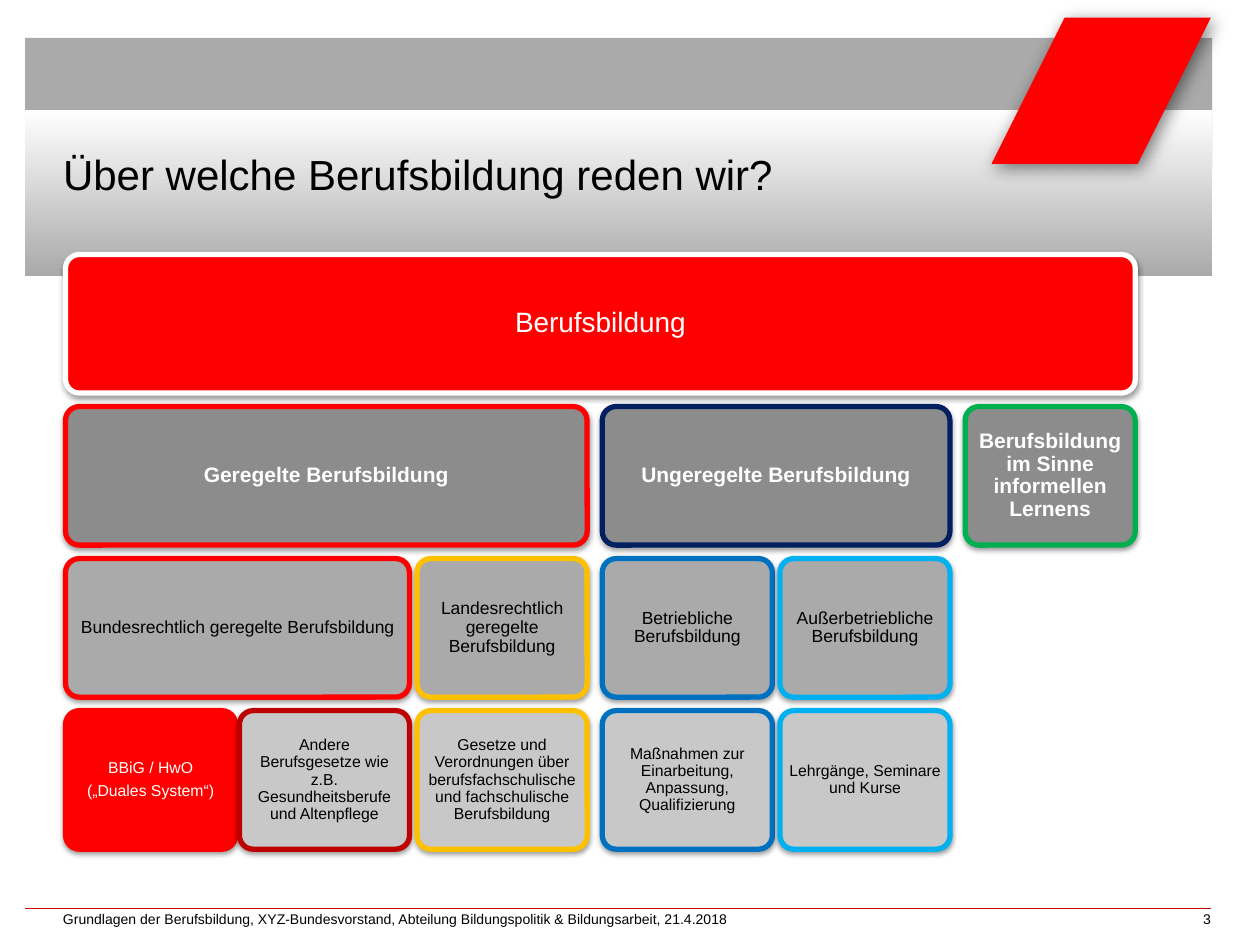
from lxml import etree
from pptx import Presentation
from pptx.dml.color import RGBColor
from pptx.enum.shapes import MSO_CONNECTOR, MSO_SHAPE
from pptx.enum.text import MSO_ANCHOR, MSO_AUTO_SIZE, PP_ALIGN
from pptx.oxml.ns import qn
from pptx.util import Inches, Pt

WHITE = RGBColor(0xFF, 0xFF, 0xFF)
BLACK = RGBColor(0x00, 0x00, 0x00)
RED = RGBColor(0xFF, 0x00, 0x00)
DARK_RED = RGBColor(0xBF, 0x00, 0x00)
RULE_RED = RGBColor(0xCC, 0x00, 0x00)
YELLOW = RGBColor(0xFF, 0xC0, 0x00)
NAVY = RGBColor(0x00, 0x20, 0x60)
BLUE = RGBColor(0x00, 0x70, 0xC0)
SKY = RGBColor(0x00, 0xB0, 0xF0)
GREEN = RGBColor(0x00, 0xB0, 0x50)
DARK_GREY = RGBColor(0x8C, 0x8C, 0x8C)
GREY = RGBColor(0xAA, 0xAA, 0xAA)
LIGHT_GREY = RGBColor(0xC8, 0xC8, 0xC8)
FONT = "Arial"

TITLE = "Über welche Berufsbildung reden wir?"
FOOTER = ("Grundlagen der Berufsbildung, XYZ-Bundesvorstand, "
          "Abteilung Bildungspolitik & Bildungsarbeit, 21.4.2018")
PAGE = "3"

# Each node: (paragraphs, outline colour, children)
TREE = (["Berufsbildung"], WHITE, [
    (["Geregelte Berufsbildung"], RED, [
        (["Bundesrechtlich geregelte Berufsbildung"], RED, [
            (["BBiG / HwO", "(„Duales System“)"], RED, []),
            (["Andere Berufsgesetze wie z.B. Gesundheitsberufe und Altenpflege"],
             DARK_RED, []),
        ]),
        (["Landesrechtlich geregelte Berufsbildung"], YELLOW, [
            (["Gesetze und Verordnungen über berufsfachschulische "
              "und fachschulische Berufsbildung"], YELLOW, []),
        ]),
    ]),
    (["Ungeregelte Berufsbildung"], NAVY, [
        (["Betriebliche Berufsbildung"], BLUE, [
            (["Maßnahmen zur Einarbeitung, Anpassung, Qualifizierung"], BLUE, []),
        ]),
        (["Außerbetriebliche Berufsbildung"], SKY, [
            (["Lehrgänge, Seminare und Kurse"], SKY, []),
        ]),
    ]),
    (["Berufsbildung im Sinne informellen Lernens"], GREEN, []),
])

# Per level: fill, font colour, font size, bold, margin, gap between children
LEVELS = [
    (RED, WHITE, 16, False, 0.07, 0.12),
    (DARK_GREY, WHITE, 12, True, 0.05, 0.06),
    (GREY, BLACK, 10, False, 0.04, 0.03),
    (LIGHT_GREY, BLACK, 9, False, 0.04, 0),
]
HIGHLIGHT = "BBiG / HwO"

TREE_LEFT, TREE_TOP, LAST_ROW_TOP = 0.52, 2.02, 5.64
BOX_W, BOX_H = 1.35, 1.1
ROW_STEP = (LAST_ROW_TOP - TREE_TOP) / (len(LEVELS) - 1)
BAND_LEFT, BAND_W = 0.2, 9.42
TEXT_LEFT, RIGHT_EDGE = 0.5, 9.61
FOOTER_TOP, FOOTER_H = 7.21, 0.16


def add_block(shapes, kind, left, top, width, height, fill=None):
    block = shapes.add_shape(kind, *map(Inches, (left, top, width, height)))
    block.shadow.inherit = False
    block.line.fill.background()
    if fill is not None:
        block.fill.solid()
        block.fill.fore_color.rgb = fill
    return block


def cast_shadow(shape, opacity, blur, distance, angle):
    """Give a shape an outer shadow; blur and distance in points."""
    effects = shape.element.spPr.find(qn("a:effectLst"))
    shadow = etree.SubElement(
        effects, qn("a:outerShdw"), blurRad=str(Pt(blur)), dist=str(Pt(distance)),
        dir=str(angle * 60000), algn="ctr", rotWithShape="0")
    colour = etree.SubElement(shadow, qn("a:srgbClr"), val=str(BLACK))
    etree.SubElement(colour, qn("a:alpha"), val=str(opacity * 1000))


def write(frame, paragraphs, size, colour, align, anchor=MSO_ANCHOR.MIDDLE,
          margins=(0, 0), bold=False):
    """Fill a text frame; margins are (horizontal, vertical) in inches."""
    frame.word_wrap = True
    frame.auto_size = MSO_AUTO_SIZE.NONE
    frame.vertical_anchor = anchor
    frame.margin_left = frame.margin_right = Inches(margins[0])
    frame.margin_top = frame.margin_bottom = Inches(margins[1])
    for index, text in enumerate(paragraphs):
        paragraph = frame.add_paragraph() if index else frame.paragraphs[0]
        paragraph.alignment = align
        run = paragraph.add_run()
        run.text = text
        run.font.name, run.font.size, run.font.bold = FONT, Pt(size), bold
        run.font.color.rgb = colour


def tree_width(node, level=0):
    children = node[2]
    if not children:
        return BOX_W
    gaps = LEVELS[level][-1] * (len(children) - 1)
    return sum(tree_width(child, level + 1) for child in children) + gaps


def draw_tree(shapes, node, left=TREE_LEFT, level=0):
    """Draw a node spanning its children, then the children below it."""
    paragraphs, outline, children = node
    fill, colour, size, bold, margin, gap = LEVELS[level]
    if paragraphs[0] == HIGHLIGHT:
        fill, colour = RED, WHITE
    box = add_block(shapes, MSO_SHAPE.ROUNDED_RECTANGLE, left,
                    TREE_TOP + level * ROW_STEP, tree_width(node, level), BOX_H, fill)
    box.adjustments[0] = 0.1
    box.line.color.rgb = outline
    box.line.width = Pt(3)
    cast_shadow(box, 38, 3.1, 1.6, 90)
    write(box.text_frame, paragraphs, size, colour, PP_ALIGN.CENTER,
          margins=(margin, margin), bold=bold)
    for paragraph in box.text_frame.paragraphs:
        paragraph.line_spacing = 0.9
        paragraph.space_after = Pt(0.35 * size)
    for child in children:
        draw_tree(shapes, child, left, level + 1)
        left += tree_width(child, level + 1) + gap


def draw_header(shapes):
    add_block(shapes, MSO_SHAPE.RECTANGLE, BAND_LEFT, 0.3, BAND_W, 1.05, GREY)
    band = add_block(shapes, MSO_SHAPE.RECTANGLE, BAND_LEFT, 0.87, BAND_W, 1.32)
    band.fill.gradient()
    band.fill.gradient_angle = 270
    for stop, colour in zip(band.fill.gradient_stops, (WHITE, GREY)):
        stop.color.rgb = colour
    emblem = add_block(shapes, MSO_SHAPE.PARALLELOGRAM, 7.87, 0.14, 1.74, 1.16, RED)
    emblem.adjustments[0] = 0.5
    cast_shadow(emblem, 50, 10, 3, 56)


def draw_title(shapes):
    title = shapes.title
    title.left, title.top, title.width, title.height = map(
        Inches, (TEXT_LEFT, 0.52, 6.84, 1.11))
    write(title.text_frame, [TITLE], 24, BLACK, PP_ALIGN.LEFT,
          MSO_ANCHOR.BOTTOM, (0, 0.05))
    title.element.getparent().append(title.element)  # in front of the header bands


def draw_footer(shapes):
    rule = shapes.add_connector(
        MSO_CONNECTOR.STRAIGHT, Inches(BAND_LEFT), Inches(FOOTER_TOP),
        Inches(RIGHT_EDGE), Inches(FOOTER_TOP))
    rule.line.color.rgb = RULE_RED
    rule.line.width = Pt(0.75)
    etree.SubElement(rule.element.spPr, qn("a:effectLst"))
    for text, left, width, align in (
            (FOOTER, TEXT_LEFT, 7.64, PP_ALIGN.LEFT),
            (PAGE, RIGHT_EDGE - 0.39, 0.39, PP_ALIGN.RIGHT)):
        note = shapes.add_textbox(*map(Inches, (left, FOOTER_TOP, width, FOOTER_H)))
        write(note.text_frame, [text], 8, BLACK, align)


def main():
    deck = Presentation()
    deck.slide_width, deck.slide_height = Inches(10), Inches(7.5)
    shapes = deck.slides.add_slide(deck.slide_layouts[5]).shapes
    draw_header(shapes)
    draw_title(shapes)
    draw_footer(shapes)
    draw_tree(shapes, TREE)
    deck.save("out.pptx")


if __name__ == "__main__":
    main()
